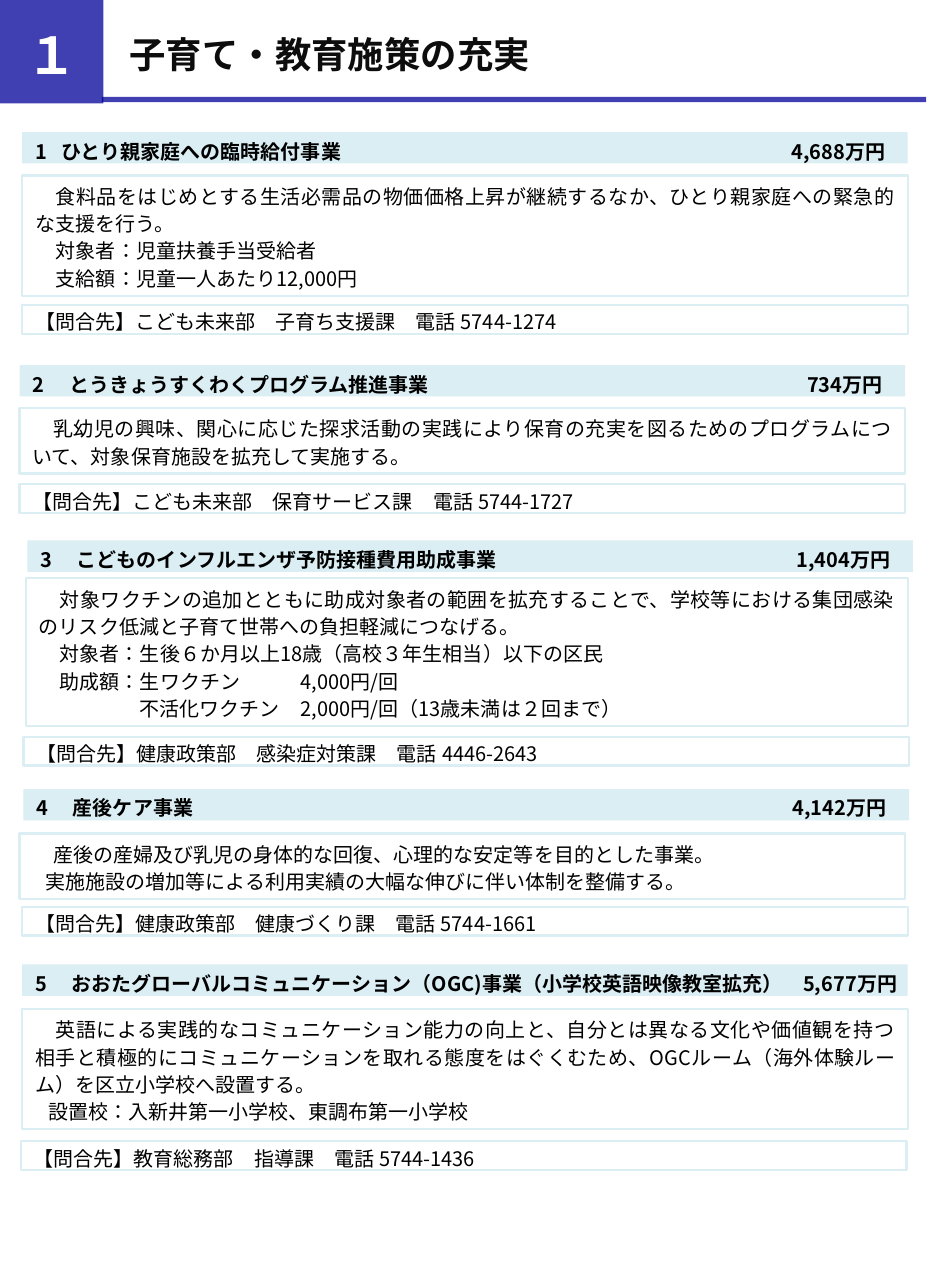
from dataclasses import dataclass

from lxml import etree
from pptx import Presentation
from pptx.dml.color import RGBColor
from pptx.enum.lang import MSO_LANGUAGE_ID
from pptx.enum.shapes import MSO_SHAPE
from pptx.enum.text import MSO_ANCHOR, MSO_AUTO_SIZE, PP_ALIGN
from pptx.oxml.ns import qn
from pptx.util import Inches, Pt

RECTANGLE = MSO_SHAPE.RECTANGLE
MIDDLE = MSO_ANCHOR.MIDDLE
NO_AUTOFIT = MSO_AUTO_SIZE.NONE
LEFT, CENTER, JUSTIFY = PP_ALIGN.LEFT, PP_ALIGN.CENTER, PP_ALIGN.JUSTIFY
JAPANESE = MSO_LANGUAGE_ID.JAPANESE

FONT = "Noto Sans CJK JP"
COLORS = {
    "navy": "000099",
    "pale": "DBEEF4",
    "white": "FFFFFF",
    "black": "000000",
    "ink": "0D0D0D",
}
CM_PER_INCH = 2.54
PAGE_WIDTH_CM = 18
PAGE_HEIGHT_CM = 25
BOX_WIDTH = 6.77
HEADING_HEIGHT = 0.24
CONTACT_HEIGHT = 0.22


@dataclass(frozen=True)
class Line:
    text: str
    indent: float = 0.0
    tabs: tuple[tuple[float, str], ...] = ()


@dataclass(frozen=True)
class Style:
    insets: tuple[float, float, float, float]
    size: float = 11
    bold: bool = False
    color: str = "black"
    align: PP_ALIGN = LEFT
    spacing: float | None = None


@dataclass(frozen=True)
class Area:
    left: float
    top: float
    height: float
    width: float = BOX_WIDTH


@dataclass(frozen=True)
class Project:
    number: int
    name: str
    amount: str
    contact: str
    lines: tuple[Line, ...]
    heading_at: tuple[float, float]
    body: Area
    contact_at: tuple[float, float]
    name_tab: float = 0.28
    amount_tab: float = 6.5


HEADING = Style((0.1, 0.05, 0, 0), bold=True)
BODY = Style((0.1, 0.04, 0.1, 0.04), align=JUSTIFY, spacing=15)
CONTACT = Style((0.1, 0.04, 0.1, 0), align=JUSTIFY)
TITLE = Style((0.2, 0.08, 0.1, 0.04), size=20, bold=True, color="ink")
CHAPTER = Style((0.08, 0.08, 0.08, 0.04), size=28, bold=True, color="white", align=CENTER)

PROJECTS = (
    Project(
        1, "ひとり親家庭への臨時給付事業", "4,688万円",
        "こども未来部　子育ち支援課　電話 5744-1274",
        (
            Line("食料品をはじめとする生活必需品の物価価格上昇が継続するなか、ひとり親家庭への緊急的な支援を行う。", 0.16),
            Line("対象者：児童扶養手当受給者", 0.16),
            Line("支給額：児童一人あたり12,000円", 0.16),
        ),
        (0.17, 1.01), Area(0.17, 1.34, 0.92), (0.17, 2.33), name_tab=0.2,
    ),
    Project(
        2, "とうきょうすくわくプログラム推進事業", "734万円",
        "こども未来部　保育サービス課　電話 5744-1727",
        (
            Line("乳幼児の興味、関心に応じた探求活動の実践により保育の充実を図るためのプログラムについて、対象保育施設を拡充して実施する。", 0.16),
        ),
        (0.15, 2.79), Area(0.15, 3.12, 0.5), (0.15, 3.7),
    ),
    Project(
        3, "こどものインフルエンザ予防接種費用助成事業", "1,404万円",
        "健康政策部　感染症対策課　電話 4446-2643",
        (
            Line("対象ワクチンの追加とともに助成対象者の範囲を拡充することで、学校等における集団感染のリスク低減と子育て世帯への負担軽減につなげる。", 0.16),
            Line("対象者：生後６か月以上18歳（高校３年生相当）以下の区民", 0.16),
            Line("助成額：生ワクチン\t4,000円/回", 0.16),
            Line("不活化ワクチン\t2,000円/回（13歳未満は２回まで）", 0.77),
        ),
        (0.21, 4.13), Area(0.2, 4.42, 1.13, 6.74), (0.18, 5.63),
    ),
    Project(
        4, "産後ケア事業", "4,142万円",
        "健康政策部　健康づくり課　電話 5744-1661",
        (
            Line("産後の産婦及び乳児の身体的な回復、心理的な安定等を目的とした事業。", 0.16),
            Line("実施施設の増加等による利用実績の大幅な伸びに伴い体制を整備する。", 0.1),
        ),
        (0.18, 6.03), Area(0.15, 6.37, 0.5), (0.17, 6.93),
    ),
    Project(
        5, "おおたグローバルコミュニケーション（OGC)事業（小学校英語映像教室拡充）", "5,677万円",
        "教育総務部　指導課　電話 5744-1436",
        (
            Line("英語による実践的なコミュニケーション能力の向上と、自分とは異なる文化や価値観を持つ相手と積極的にコミュニケーションを取れる態度をはぐくむため、OGCルーム（海外体験ルーム）を区立小学校へ設置する。", 0.16),
            Line("設置校：入新井第一小学校、東調布第一小学校", 0.1),
        ),
        (0.17, 7.37), Area(0.17, 7.71, 0.92), (0.16, 8.72), amount_tab=6.59,
    ),
)


def set_all(target, values: dict) -> None:
    for name, value in values.items():
        setattr(target, name, value)


def rgb(name: str) -> RGBColor:
    return RGBColor.from_string(COLORS[name])


def write(shape, lines: tuple[Line, ...], style: Style) -> None:
    frame = shape.text_frame
    left, top, right, bottom = map(Inches, style.insets)
    set_all(frame, {
        "margin_left": left, "margin_top": top,
        "margin_right": right, "margin_bottom": bottom,
        "word_wrap": True, "auto_size": NO_AUTOFIT, "vertical_anchor": MIDDLE,
    })
    for index, line in enumerate(lines):
        para = frame.add_paragraph() if index else frame.paragraphs[0]
        para.alignment = style.align
        if style.spacing:
            para.line_spacing = Pt(style.spacing)
        properties = para._p.get_or_add_pPr()
        if line.indent:
            properties.set("indent", str(Inches(line.indent)))
        if line.tabs:
            stops = etree.SubElement(properties, qn("a:tabLst"))
            for position, side in line.tabs:
                etree.SubElement(stops, qn("a:tab"), pos=str(Inches(position)), algn=side)
        span = para.add_run()
        span.text = line.text
        set_all(span.font, {
            "name": FONT, "size": Pt(style.size),
            "bold": style.bold, "language_id": JAPANESE,
        })
        span.font.color.rgb = rgb(style.color)
        etree.SubElement(span.font._element, qn("a:ea"), typeface=FONT)


def add_box(page, area: Area, fill: str, line: str | None = None, opacity: int = 100):
    box = page.shapes.add_shape(
        RECTANGLE, *map(Inches, (area.left, area.top, area.width, area.height)))
    box.shadow.inherit = False
    box.fill.solid()
    box.fill.fore_color.rgb = rgb(fill)
    if opacity < 100:
        color = box._element.spPr.find(f".//{qn('a:srgbClr')}")
        etree.SubElement(color, qn("a:alpha"), val=str(opacity * 1000))
    if line:
        box.line.color.rgb = rgb(line)
        box.line.width = Pt(1.25)
    else:
        box.line.fill.background()
    return box


def add_banner(page) -> None:
    badge = add_box(page, Area(0, 0, 0.79, 0.79), "navy", opacity=75)
    write(badge, (Line("１"),), CHAPTER)
    add_box(page, Area(0.78, 0.74, 0.04, 6.3), "navy", opacity=75)
    title = page.shapes.title
    set_all(title, {"left": Inches(0.79), "top": Inches(0),
                    "width": Inches(6.3), "height": Inches(0.78)})
    write(title, (Line("子育て・教育施策の充実"),), TITLE)


def add_project(page, project: Project) -> None:
    heading = add_box(page, Area(*project.heading_at, HEADING_HEIGHT), "pale")
    tabs = ((project.name_tab, "l"), (project.amount_tab, "r"))
    text = f"{project.number}\t{project.name}\t{project.amount}"
    write(heading, (Line(text, tabs=tabs),), HEADING)
    write(add_box(page, project.body, "white", "pale"), project.lines, BODY)
    contact = add_box(page, Area(*project.contact_at, CONTACT_HEIGHT), "white", "pale")
    write(contact, (Line(f"【問合先】{project.contact}"),), CONTACT)


def main() -> None:
    deck = Presentation()
    deck.slide_width = Inches(PAGE_WIDTH_CM / CM_PER_INCH)
    deck.slide_height = Inches(PAGE_HEIGHT_CM / CM_PER_INCH)
    page = deck.slides.add_slide(deck.slide_layouts.get_by_name("Title Only"))
    add_banner(page)
    for project in PROJECTS:
        add_project(page, project)
    deck.save("out.pptx")


if __name__ == "__main__":
    main()
